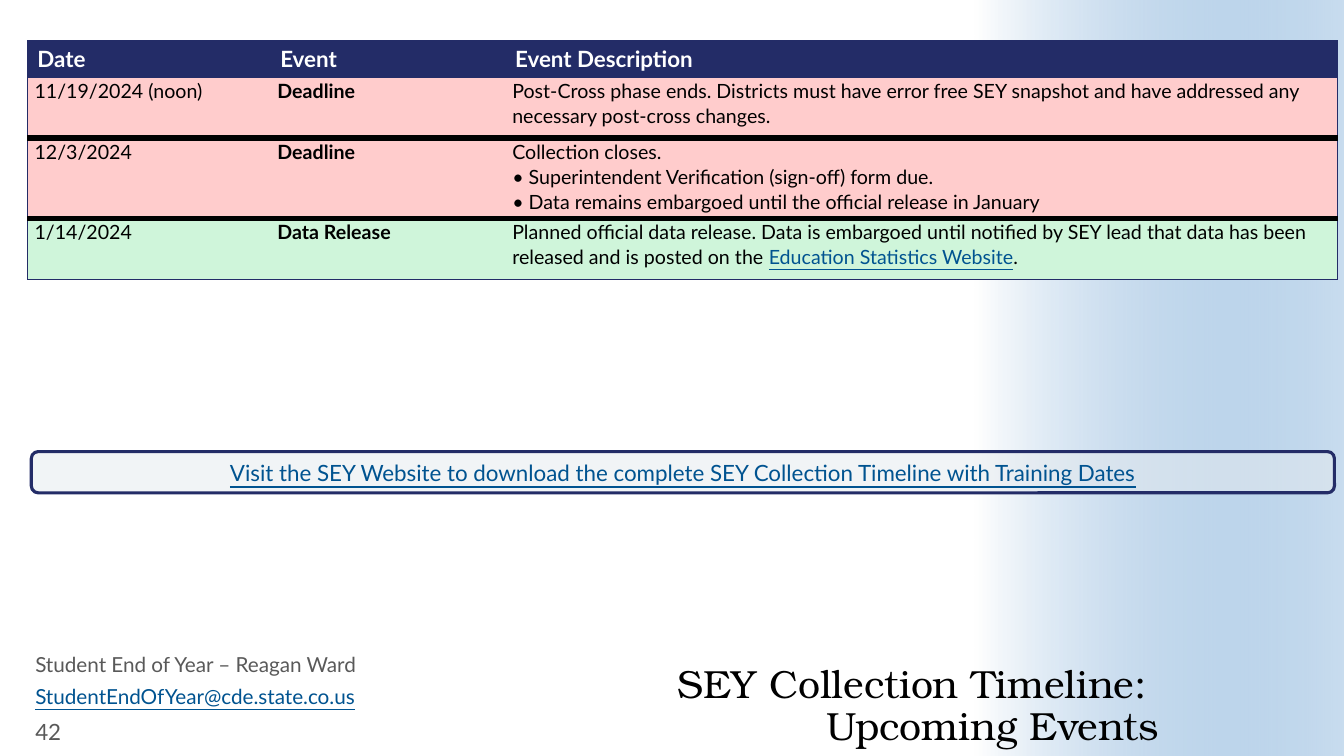
from collections import namedtuple
from dataclasses import dataclass

from lxml.etree import SubElement
from pptx import Presentation
from pptx.dml.color import RGBColor
from pptx.enum.shapes import MSO_SHAPE
from pptx.enum.text import MSO_ANCHOR, MSO_AUTO_SIZE, PP_ALIGN
from pptx.oxml.ns import qn
from pptx.util import Cm, Pt


@dataclass(frozen=True)
class Theme:
    navy: str = "232C67"
    white: str = "FFFFFF"
    black: str = "000000"
    gray: str = "595959"
    link: str = "005390"
    pink: str = "FFCCCC"
    green: str = "CFF5DA"
    pale: str = "E5EAEE"
    sky: str = "488BC9"
    body_font: str = "Lato"
    title_font: str = "TeX Gyre Bonum"
    title_size: float = 28
    heading_size: float = 16
    contact_size: float = 14.8
    cell_size: float = 14
    thin_line: float = 0.5
    thick_line: float = 4.5
    frame_line: float = 2.25


THEME = Theme()
Box = namedtuple("Box", "left top width height")
SLIDE = Box(0, 0, 33.87, 19.05)

COLUMN_WIDTHS = (6.12, 5.92, 20.98)
ROW_HEIGHTS = (0.94, 1.52, 2.03, 1.52)
HEADINGS = ("Date", "Event", "Event Description")
LINK_TEXT = "Education Statistics Website"
EVENTS = (
    ("11/19/2024 (noon)", "Deadline",
     "Post-Cross phase ends. Districts must have error free SEY snapshot and have "
     "addressed any necessary post-cross changes.", THEME.pink),
    ("12/3/2024", "Deadline",
     "Collection closes.\n"
     "• Superintendent Verification (sign-off) form due.\n"
     "• Data remains embargoed until the official release in January", THEME.pink),
    ("1/14/2024", "Data Release",
     "Planned official data release. Data is embargoed until notified by SEY lead that "
     f"data has been released and is posted on the {LINK_TEXT}.", THEME.green),
)


def color(value):
    return RGBColor.from_string(value)


def place(box):
    return [Cm(length) for length in box]


def style_font(font, size, value, name=THEME.body_font, bold=False, underline=False):
    font.name = name
    font.size = Pt(size)
    font.color.rgb = color(value)
    font.bold = bold
    font.underline = underline


def set_alpha(fill_element, percent):
    SubElement(fill_element, qn("a:alpha")).set("val", str(percent * 1000))


def add_side_gradient(slide, box):
    shape = slide.shapes.add_shape(MSO_SHAPE.RECTANGLE, *place(box))
    shape.shadow.inherit = False
    shape.line.fill.background()
    shape.fill.gradient()
    shape.fill.gradient_angle = 0
    first, last = shape.fill.gradient_stops
    first.color.rgb = color(THEME.white)
    first.position = 0
    last.color.rgb = color(THEME.sky)
    last.position = 1
    set_alpha(shape.element.spPr.findall(".//" + qn("a:srgbClr"))[-1], 30)


def add_title(slide, box):
    title = slide.shapes.title
    title.left, title.top, title.width, title.height = place(box)
    frame = title.text_frame
    frame.word_wrap = True
    frame.auto_size = MSO_AUTO_SIZE.NONE
    frame.vertical_anchor = MSO_ANCHOR.BOTTOM
    frame.margin_left = frame.margin_right = frame.margin_top = frame.margin_bottom = 0
    frame.text = "SEY Collection Timeline: \vUpcoming Events"
    paragraph = frame.paragraphs[0]
    paragraph.alignment = PP_ALIGN.RIGHT
    paragraph.line_spacing = 0.9
    style_font(paragraph.font, THEME.title_size, THEME.black, THEME.title_font)


def set_border(cell, tag, border):
    properties = cell._tc.get_or_add_tcPr()
    line = SubElement(properties, qn(f"a:{tag}"))
    if border is None:
        line.set("w", "0")
        SubElement(line, qn("a:noFill"))
        return
    value, width = border
    line.set("w", str(Pt(width)))
    SubElement(SubElement(line, qn("a:solidFill")), qn("a:srgbClr")).set("val", value)


def fill_event_cell(cell, text, bold):
    cell.margin_left = cell.margin_right = Cm(0.18)
    cell.margin_top = cell.margin_bottom = 0
    frame = cell.text_frame
    for index, line in enumerate(text.split("\n")):
        paragraph = frame.paragraphs[0] if index == 0 else frame.add_paragraph()
        paragraph.line_spacing = 1.07
        style_font(paragraph.font, THEME.cell_size, THEME.black, bold=bold)
        before, link, after = line.partition(LINK_TEXT)
        for part in filter(None, (before, link, after)):
            run = paragraph.add_run()
            run.text = part
            if part == LINK_TEXT:
                run.font.color.rgb = color(THEME.link)
                run.font.underline = True


def add_timeline(slide, box):
    rows, columns = len(ROW_HEIGHTS), len(COLUMN_WIDTHS)
    table = slide.shapes.add_table(rows, columns, *place(box)).table
    table.horz_banding = False
    for column, width in zip(table.columns, COLUMN_WIDTHS):
        column.width = Cm(width)
    for row, height in zip(table.rows, ROW_HEIGHTS):
        row.height = Cm(height)
    thin = (THEME.navy, THEME.thin_line)
    thick = (THEME.black, THEME.thick_line)
    edges = (thin, thin, thick, thick, thin)
    for row in range(rows):
        for column in range(columns):
            cell = table.cell(row, column)
            set_border(cell, "lnL", thin if column == 0 else None)
            set_border(cell, "lnR", thin if column == columns - 1 else None)
            set_border(cell, "lnT", edges[row])
            set_border(cell, "lnB", edges[row + 1])
            cell.fill.solid()
            if row == 0:
                cell.fill.fore_color.rgb = color(THEME.navy)
                cell.text = HEADINGS[column]
                style_font(cell.text_frame.paragraphs[0].font,
                           THEME.heading_size, THEME.white, bold=True)
            else:
                event = EVENTS[row - 1]
                cell.fill.fore_color.rgb = color(event[-1])
                fill_event_cell(cell, event[column], bold=column == 1)


def add_download_banner(slide, box):
    shape = slide.shapes.add_shape(MSO_SHAPE.ROUNDED_RECTANGLE, *place(box))
    shape.shadow.inherit = False
    shape.fill.solid()
    shape.fill.fore_color.rgb = color(THEME.pale)
    set_alpha(shape.element.spPr.find(".//" + qn("a:srgbClr")), 50)
    shape.line.color.rgb = color(THEME.navy)
    shape.line.width = Pt(THEME.frame_line)
    frame = shape.text_frame
    frame.vertical_anchor = MSO_ANCHOR.MIDDLE
    frame.text = "Visit the SEY Website to download the complete SEY Collection Timeline with Training Dates"
    paragraph = frame.paragraphs[0]
    paragraph.alignment = PP_ALIGN.CENTER
    style_font(paragraph.font, THEME.heading_size, THEME.link, underline=True)


def add_contact(slide, box):
    lines = (
        ("Student End of Year – Reagan Ward", THEME.contact_size, THEME.gray, 0.8),
        ("StudentEndOfYear@cde.state.co.us", THEME.contact_size, THEME.link, 0.8),
        ("42", THEME.heading_size, THEME.gray, 1.0),
    )
    height = box.height / len(lines)
    for index, (text, size, value, spacing) in enumerate(lines):
        line_box = Box(box.left, box.top + index * height, box.width, height)
        frame = slide.shapes.add_textbox(*place(line_box)).text_frame
        frame.word_wrap = True
        frame.vertical_anchor = MSO_ANCHOR.MIDDLE if text == "42" else MSO_ANCHOR.TOP
        frame.text = text
        paragraph = frame.paragraphs[0]
        paragraph.line_spacing = spacing
        style_font(paragraph.font, size, value, underline=value == THEME.link)


def main():
    presentation = Presentation()
    presentation.slide_width = Cm(SLIDE.width)
    presentation.slide_height = Cm(SLIDE.height)
    slide = presentation.slides.add_slide(presentation.slide_layouts[5])
    add_side_gradient(slide, Box(24.57, 0, 9.3, SLIDE.height))
    add_title(slide, Box(10.82, 16.38, 18.39, 2.49))
    slide.shapes._spTree.append(slide.shapes.title.element)
    add_timeline(slide, Box(0.69, 1.02, sum(COLUMN_WIDTHS), sum(ROW_HEIGHTS)))
    add_download_banner(slide, Box(0.79, 11.38, 32.84, 1.04))
    add_contact(slide, Box(0.64, 16.43, 9.88, 2.4))
    presentation.save("out.pptx")


if __name__ == "__main__":
    main()
